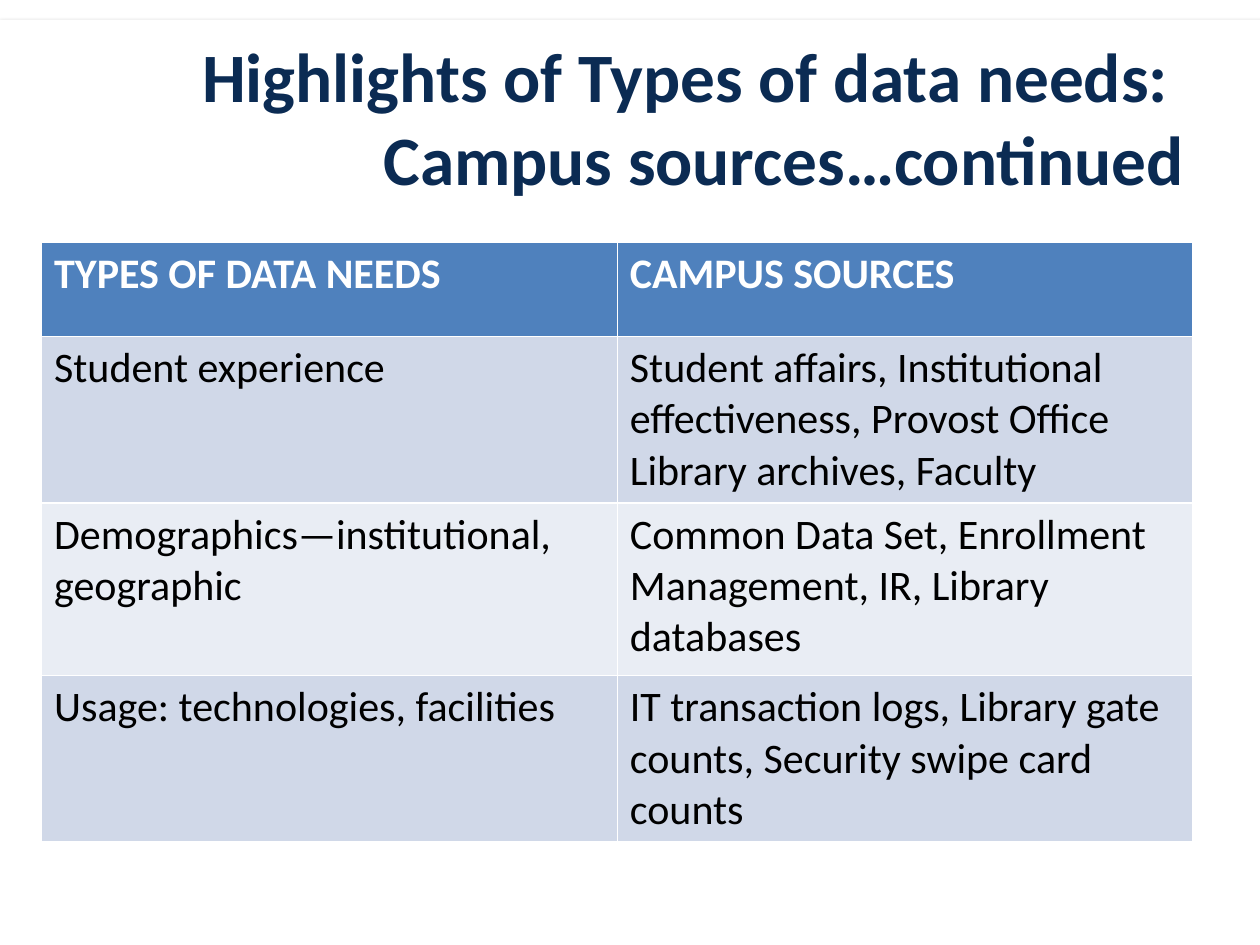
import pptx
import pptx.dml.color
import pptx.enum.shapes
import pptx.enum.text
import pptx.oxml
import pptx.oxml.ns
import pptx.util

WIDTH, HEIGHT = pptx.util.Inches(10), pptx.util.Inches(7.5)
FONT = "Calibri"
NAVY, BLUE, WHITE, BLACK = "0B2B53", "4F81BD", "FFFFFF", "000000"
BANDS = ["D0D8E8", "E9EDF4"]
ROW_HEIGHTS = [0.75, 1.3, 1.37, 1.3]
ROWS = [
    ["TYPES OF DATA NEEDS", "CAMPUS SOURCES"],
    ["Student experience",
     "Student affairs, Institutional effectiveness, Provost Office\nLibrary archives, Faculty"],
    ["Demographics—institutional, geographic",
     "Common Data Set, Enrollment Management, IR, Library databases"],
    ["Usage: technologies, facilities",
     "IT transaction logs, Library gate counts, Security swipe card counts"],
]


def rgb(value):
    return pptx.dml.color.RGBColor.from_string(value)


def share(x, y, w, h):
    """Turn shares of the slide's size into a box of lengths."""
    return int(x * WIDTH), int(y * HEIGHT), int(w * WIDTH), int(h * HEIGHT)


def format_text(tf, size, color, bold):
    for p in tf.paragraphs:
        for r in p.runs:
            r.font.name = FONT
            r.font.size = pptx.util.Pt(size)
            r.font.bold = bold
            r.font.color.rgb = rgb(color)


def add_panel(s, box):
    sp = s.shapes.add_shape(pptx.enum.shapes.MSO_SHAPE.RECTANGLE, *box)
    sp.fill.solid()
    sp.fill.fore_color.rgb = rgb(WHITE)
    sp.line.color.rgb = rgb(WHITE)
    sp.line.width = pptx.util.Pt(0.75)
    # Soft shadow that shows along the top edge
    sp.element.spPr.append(pptx.oxml.parse_xml(
        f'<a:effectLst {pptx.oxml.ns.nsdecls("a")}>'
        f'<a:outerShdw blurRad="{pptx.util.Pt(3.1)}" dist="{pptx.util.Pt(1.8)}" '
        'dir="5400000" rotWithShape="0">'
        f'<a:srgbClr val="{BLACK}"><a:alpha val="35000"/></a:srgbClr>'
        '</a:outerShdw></a:effectLst>'))
    # Keep the panel behind the title
    s.shapes.title.element.addprevious(sp.element)


def add_title(s, box):
    sp = s.shapes.title
    sp.left, sp.top, sp.width, sp.height = box
    tf = sp.text_frame
    tf.text = "Highlights of Types of data needs: \vCampus sources…continued"
    tf.vertical_anchor = pptx.enum.text.MSO_ANCHOR.MIDDLE
    tf.paragraphs[0].alignment = pptx.enum.text.PP_ALIGN.RIGHT
    format_text(tf, 39.6, NAVY, True)


def add_sources_table(s, box):
    table = s.shapes.add_table(len(ROWS), len(ROWS[0]), *box).table
    for i, texts in enumerate(ROWS):
        table.rows[i].height = int(box[3] * ROW_HEIGHTS[i] / sum(ROW_HEIGHTS))
        header = i == 0
        for j, text in enumerate(texts):
            cell = table.cell(i, j)
            cell.text_frame.text = text
            cell.fill.solid()
            cell.fill.fore_color.rgb = rgb(BLUE if header else BANDS[(i - 1) % 2])
            format_text(cell.text_frame, 24, WHITE if header else BLACK, header)


def main():
    prs = pptx.Presentation()
    prs.slide_width, prs.slide_height = WIDTH, HEIGHT
    s = prs.slides.add_slide(prs.slide_layouts.get_by_name("Title Only"))
    add_panel(s, share(0, 0.022, 1.017, 1))
    add_title(s, share(0.05, 0.04, 0.9, 1 / 6))
    add_sources_table(s, share(0.033, 0.256, 0.914, 0.63))
    prs.save("out.pptx")


if __name__ == "__main__":
    main()
